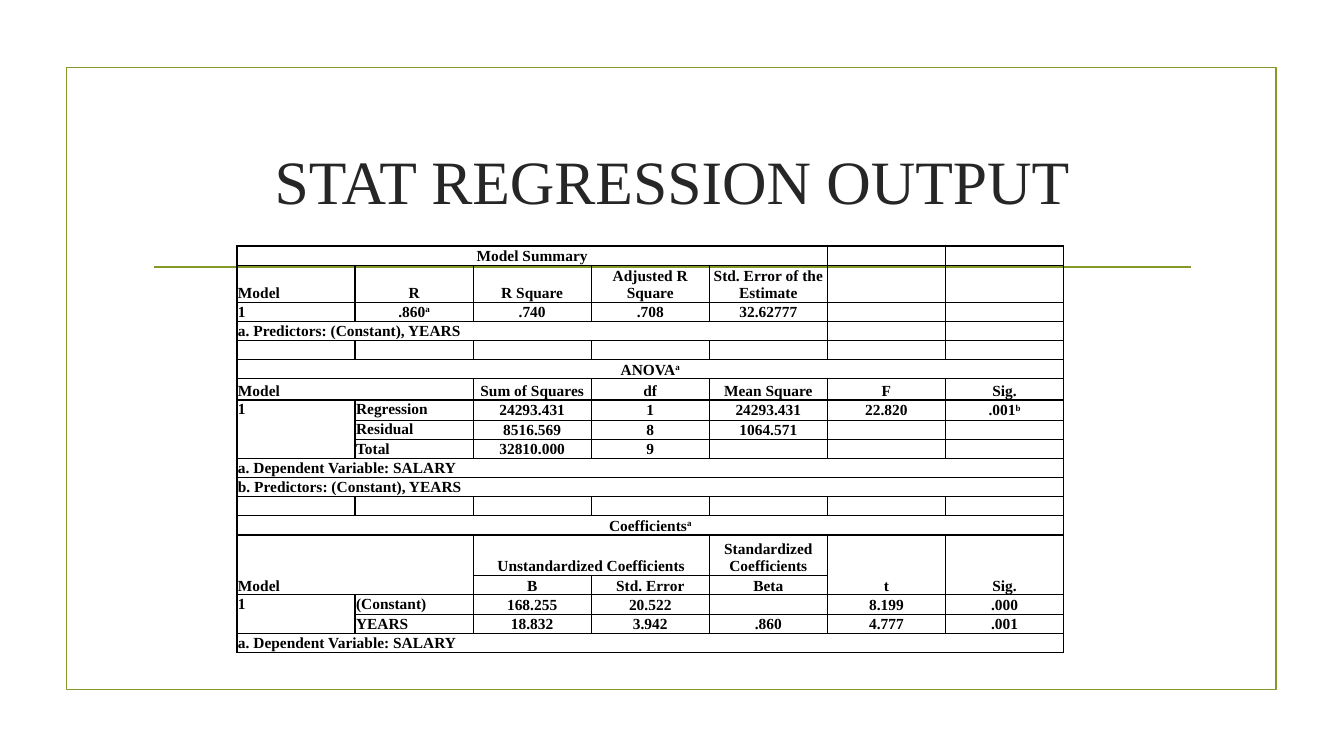
from lxml.etree import SubElement
from pptx import Presentation
from pptx.dml.color import RGBColor
from pptx.enum.shapes import MSO_CONNECTOR, MSO_SHAPE
from pptx.enum.text import MSO_ANCHOR, PP_ALIGN
from pptx.oxml import parse_xml
from pptx.oxml.ns import nsdecls, qn
from pptx.util import Inches, Pt

GREEN = RGBColor(0x83, 0x99, 0x2A)
DARK = RGBColor(0x26, 0x26, 0x26)
BLACK = RGBColor(0, 0, 0)
FONT = "Times New Roman"

# Table text by row; "^" starts a superscript
ROWS = [
    ["Model Summary"],
    ["Model", "R", "R Square", "Adjusted R Square", "Std. Error of the Estimate"],
    ["1", ".860^a", ".740", ".708", "32.62777"],
    ["a. Predictors: (Constant), YEARS"],
    [],
    ["ANOVA^a"],
    ["Model", "", "Sum of Squares", "df", "Mean Square", "F", "Sig."],
    ["1", "Regression", "24293.431", "1", "24293.431", "22.820", ".001^b"],
    ["", "Residual", "8516.569", "8", "1064.571"],
    ["", "Total", "32810.000", "9"],
    ["a. Dependent Variable: SALARY"],
    ["b. Predictors: (Constant), YEARS"],
    [],
    ["Coefficients^a"],
    ["Model", "", "Unstandardized Coefficients", "", "Standardized Coefficients", "t", "Sig."],
    ["", "", "B", "Std. Error", "Beta"],
    ["1", "(Constant)", "168.255", "20.522", "", "8.199", ".000"],
    ["", "YEARS", "18.832", "3.942", ".860", "4.777", ".001"],
    ["a. Dependent Variable: SALARY"],
]
COLS = 7
TITLES = {0, 5, 13}
HEADS = {1, 6, 14, 15}
LABELS = {7, 8, 9, 16, 17}  # rows with a label in the second column
HEIGHTS = {1: 0.37, 6: 0.21, 7: 0.2, 14: 0.4, 16: 0.2}
# First row, first column, last row, last column
SPANS = [(r, 0, r, 4) for r in (0, 3)] + [(r, 0, r, 6) for r in (5, 10, 11, 13, 18)]
SPANS += [(6, 0, 6, 1), (7, 0, 9, 0), (14, 0, 15, 1), (14, 2, 14, 3),
          (14, 5, 15, 5), (14, 6, 15, 6), (16, 0, 17, 0)]

deck = Presentation()
deck.slide_width, deck.slide_height = Inches(13.33), Inches(7.5)
slide = deck.slides.add_slide(deck.slide_layouts[5])
shapes = slide.shapes

# Frame
frame = shapes.add_shape(MSO_SHAPE.RECTANGLE, Inches(0.66), Inches(0.67), Inches(12), Inches(6.17))
frame.shadow.inherit = False
frame.fill.background()

# Rule under the title
rule = shapes.add_connector(MSO_CONNECTOR.STRAIGHT, Inches(1.53), Inches(2.65), Inches(11.81), Inches(2.65))
SubElement(rule._element.spPr, qn("a:effectLst"))
for item in (frame, rule):
    item.line.color.rgb = GREEN
    item.line.width = Pt(1.25)

# Title
title = shapes.title
title.left, title.top = Inches(1.42), Inches(1.07)
title.width, title.height = Inches(10.5), Inches(1.43)
title.text_frame.text = "STAT REGRESSION OUTPUT"
title.text_frame.vertical_anchor = MSO_ANCHOR.MIDDLE
para = title.text_frame.paragraphs[0]
para.alignment = PP_ALIGN.CENTER
para.font.name, para.font.size = FONT, Pt(44)
para.font.color.rgb = DARK

# Table
table = shapes.add_table(len(ROWS), COLS, Inches(2.35), Inches(2.44), Inches(8.2), Inches(4.03)).table
table.first_row = table.horz_banding = False
for r, texts in enumerate(ROWS):
    table.rows[r].height = Inches(HEIGHTS.get(r, 0.19))
    for c in range(COLS):
        cell = table.cell(r, c)
        cell.fill.background()
        cell.margin_left = cell.margin_right = cell.margin_top = Inches(0.01)
        cell.margin_bottom = 0

        # Position of the text
        side = r not in TITLES and (c == 0 or c == 1 and r in LABELS)
        if r in HEADS:
            cell.vertical_anchor = MSO_ANCHOR.BOTTOM
        else:
            cell.vertical_anchor = MSO_ANCHOR.TOP if side else MSO_ANCHOR.MIDDLE
        para = cell.text_frame.paragraphs[0]
        para.alignment = PP_ALIGN.LEFT if side else PP_ALIGN.CENTER
        para.font.name, para.font.size, para.font.bold = FONT, Pt(11), True
        para.font.color.rgb = BLACK

        # Text with its superscript
        main, _, mark = (texts[c] if c < len(texts) else "").partition("^")
        if main:
            para.add_run().text = main
        else:
            SubElement(para._p, qn("a:endParaRPr"), sz="1100")
        if mark:
            run = para.add_run()
            run.text = mark
            run._r.get_or_add_rPr().set("baseline", "30000")

        # Borders
        props = cell._tc.get_or_add_tcPr()
        for i, edge in enumerate("LRTB"):
            props.insert(i, parse_xml(
                f'<a:ln{edge} {nsdecls("a")} w="12700"><a:solidFill>'
                f'<a:srgbClr val="{BLACK}"/></a:solidFill></a:ln{edge}>'))

for top, left, bottom, right in SPANS:
    table.cell(top, left).merge(table.cell(bottom, right))

deck.save("out.pptx")
